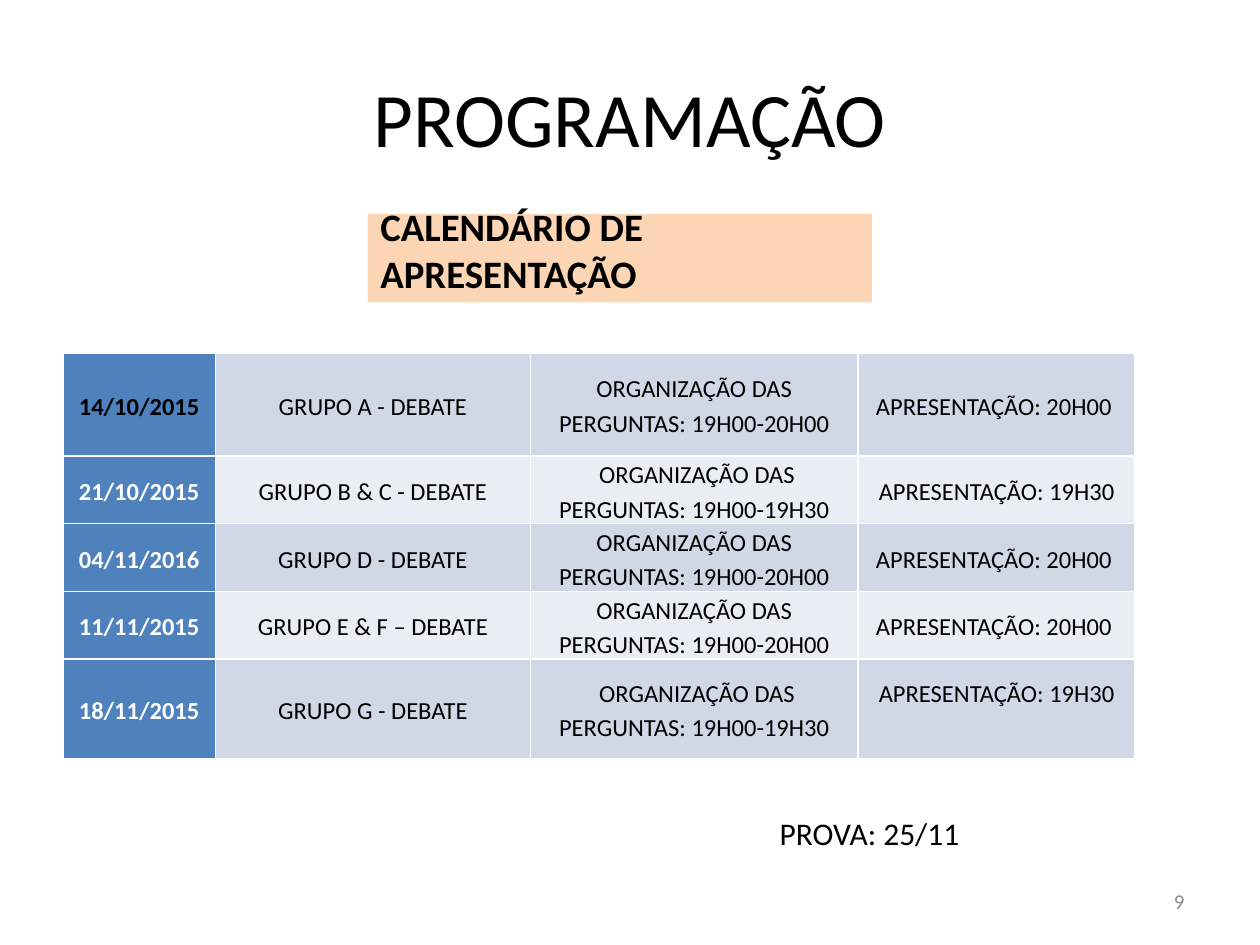
from dataclasses import dataclass

from lxml import etree
from pptx import Presentation
from pptx import util as u
from pptx.dml.color import RGBColor
from pptx.enum import shapes, text
from pptx.oxml import ns

FONT = "Calibri"
BLACK, WHITE = "000000", "FFFFFF"
DATE_FILL, BAND_FILLS = "4F81BD", ("D0D8E8", "E9EDF4")
COLUMN_WIDTHS = (1.21, 2.5, 2.6, 2.2)


@dataclass
class Label:
    content: str
    box: tuple[float, float, float, float]
    size: float
    color: str = BLACK
    bold: bool = False
    align: text.PP_ALIGN = text.PP_ALIGN.LEFT
    anchor: text.MSO_ANCHOR = text.MSO_ANCHOR.MIDDLE
    fill: str | None = None
    wrap: bool = True


@dataclass
class Session:
    date: str
    group: str
    questions: str
    start: str
    height: float = 0.52
    date_color: str = WHITE
    start_bottom: float = 0


LABELS = (
    Label("PROGRAMAÇÃO", (0.5, 0.3, 9, 1.25), 44, align=text.PP_ALIGN.CENTER),
    Label("CALENDÁRIO DE APRESENTAÇÃO", (2.92, 1.7, 4, 0.7), 22.2, bold=True,
          anchor=text.MSO_ANCHOR.BOTTOM, fill="FCD5B5"),
    Label("9", (7.17, 6.95, 2.33, 0.4), 12, "8C8C8C", align=text.PP_ALIGN.RIGHT),
    Label("PROVA: 25/11", (6.09, 6.41, 1.64, 0.4), 18,
          anchor=text.MSO_ANCHOR.TOP, wrap=False),
)

SESSIONS = (
    Session("14/10/2015", "GRUPO A - DEBATE", "ORGANIZAÇÃO DAS PERGUNTAS: 19H00-20H00",
            "APRESENTAÇÃO: 20H00 ", height=0.82, date_color=BLACK),
    Session("21/10/2015", "GRUPO B & C - DEBATE", " ORGANIZAÇÃO DAS PERGUNTAS: 19H00-19H30",
            "APRESENTAÇÃO: 19H30"),
    Session("04/11/2016", "GRUPO D - DEBATE", "ORGANIZAÇÃO DAS PERGUNTAS: 19H00-20H00",
            "APRESENTAÇÃO: 20H00 "),
    Session("11/11/2015", "GRUPO E & F – DEBATE", "ORGANIZAÇÃO DAS PERGUNTAS: 19H00-20H00",
            "APRESENTAÇÃO: 20H00 "),
    Session("18/11/2015", "GRUPO G - DEBATE", " ORGANIZAÇÃO DAS PERGUNTAS: 19H00-19H30",
            "APRESENTAÇÃO: 19H30", height=0.79, start_bottom=0.27),
)


def paint(color_format, color: str) -> None:
    color_format.rgb = RGBColor.from_string(color)


def style_paragraph(paragraph, size: float, color: str, bold: bool, align) -> None:
    paragraph.alignment = align
    for run in paragraph.runs:
        run.font.name = FONT
        run.font.size = u.Pt(size)
        run.font.bold = bold
        paint(run.font.color, color)


def add_label(slide, label: Label) -> None:
    box = [u.Inches(length) for length in label.box]
    if label.fill:
        shape = slide.shapes.add_shape(shapes.MSO_SHAPE.RECTANGLE, *box)
        shape.shadow.inherit = False
        shape.fill.solid()
        paint(shape.fill.fore_color, label.fill)
        shape.line.fill.background()
    else:
        shape = slide.shapes.add_textbox(*box)
    frame = shape.text_frame
    frame.text = label.content
    frame.word_wrap = label.wrap
    frame.vertical_anchor = label.anchor
    style_paragraph(frame.paragraphs[0], label.size, label.color, label.bold, label.align)


def add_borders(cell, color: str, width: float) -> None:
    properties = cell._tc.get_or_add_tcPr()
    for position, side in enumerate(("lnL", "lnR", "lnT", "lnB")):
        line = etree.Element(ns.qn(f"a:{side}"), w=str(u.Pt(width)))
        fill = etree.SubElement(line, ns.qn("a:solidFill"))
        etree.SubElement(fill, ns.qn("a:srgbClr"), val=color)
        properties.insert(position, line)


def fill_cell(cell, content: str, fill: str, color: str, bold: bool, bottom: float) -> None:
    cell.text = content
    cell.vertical_anchor = text.MSO_ANCHOR.MIDDLE
    cell.margin_left = cell.margin_right = u.Inches(0.05)
    cell.margin_top, cell.margin_bottom = u.Inches(0), u.Inches(bottom)
    cell.fill.solid()
    paint(cell.fill.fore_color, fill)
    add_borders(cell, WHITE, 1)
    paragraph = cell.text_frame.paragraphs[0]
    paragraph.line_spacing = 1.15
    style_paragraph(paragraph, 14, color, bold, text.PP_ALIGN.CENTER)


def add_calendar(slide, sessions: tuple[Session, ...]) -> None:
    height = sum(session.height for session in sessions)
    table = slide.shapes.add_table(
        len(sessions), len(COLUMN_WIDTHS), u.Inches(0.5), u.Inches(2.8),
        u.Inches(sum(COLUMN_WIDTHS)), u.Inches(height)).table
    table.first_row = table.horz_banding = False
    for column, width in zip(table.columns, COLUMN_WIDTHS):
        column.width = u.Inches(width)
    for index, session in enumerate(sessions):
        table.rows[index].height = u.Inches(session.height)
        band = BAND_FILLS[index % 2]
        fill_cell(table.cell(index, 0), session.date, DATE_FILL, session.date_color, True, 0)
        fill_cell(table.cell(index, 1), session.group, band, BLACK, False, 0)
        fill_cell(table.cell(index, 2), session.questions, band, BLACK, False, 0)
        fill_cell(table.cell(index, 3), session.start, band, BLACK, False, session.start_bottom)


def main() -> None:
    """Build the slide with the debate calendar."""
    presentation = Presentation()
    presentation.slide_width, presentation.slide_height = u.Inches(10), u.Inches(7.5)
    slide = presentation.slides.add_slide(presentation.slide_layouts[6])
    for label in LABELS:
        add_label(slide, label)
    add_calendar(slide, SESSIONS)
    presentation.save("out.pptx")


if __name__ == "__main__":
    main()
